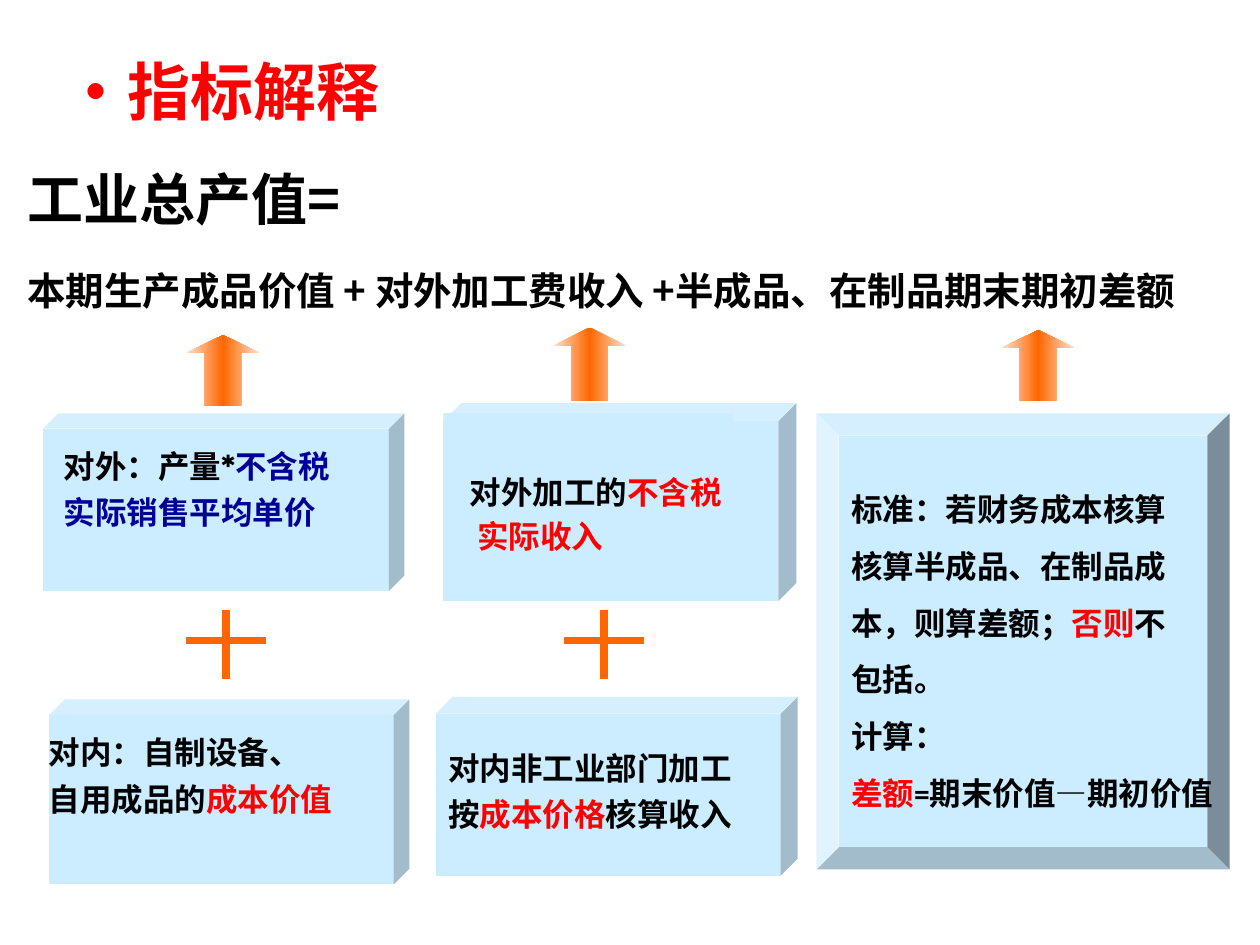
"""Build the slide that explains gross industrial output value."""
import dataclasses

import pptx
import pptx.dml.color
import pptx.enum.shapes
import pptx.enum.text
import pptx.oxml
import pptx.oxml.ns
import pptx.util

SHAPE = pptx.enum.shapes.MSO_SHAPE
ANCHOR = pptx.enum.text.MSO_ANCHOR
COLS, ROWS = 100, 75
CELL = pptx.util.Inches(0.1)


@dataclasses.dataclass(frozen=True)
class Theme:
    """Colours, fonts and type sizes of the slide."""
    ink: str = "000000"
    red: str = "FF0000"
    navy: str = "000099"
    panel: str = "CCECFF"
    orange: str = "FF6600"
    peach: str = "FFE1CD"
    heading: str = "Noto Sans CJK SC"
    label: str = "Montserrat"
    note: str = "Calibri"
    title_size: int = 36
    term_size: int = 32
    formula_size: int = 22
    body_size: int = 18
    plus_width: float = 4.25


T = Theme()


def rgb(value):
    """Turn a hex string into a colour."""
    return pptx.dml.color.RGBColor.from_string(value)


def grid(*cells):
    """Turn columns and rows of the grid into lengths."""
    return [round(c * CELL) for c in cells]


def assign(obj, values):
    """Set each attribute named in a dict."""
    for name, value in values.items():
        setattr(obj, name, value)


def write(sp, paras, size=T.body_size, font=T.label, wrap=False,
          anchor=ANCHOR.TOP, para=None, before=0.0, indents=()):
    """Write paragraphs, each a list of (text, colour[, font]) runs."""
    tf = sp.text_frame
    assign(tf, {"word_wrap": wrap, "vertical_anchor": anchor})
    for i, runs in enumerate(paras):
        p = tf.paragraphs[0] if i == 0 else tf.add_paragraph()
        assign(p, {"alignment": pptx.enum.text.PP_ALIGN.LEFT, **(para or {})})
        if i:
            p.space_before = pptx.util.Pt(size * before)
        if indents:
            p._p.get_or_add_pPr().set("marL", str(round(indents[i] * CELL)))
        for text, colour, *face in runs:
            r = p.add_run()
            r.text = text
            assign(r.font, {"size": pptx.util.Pt(size), "bold": True,
                            "name": face[0] if face else font})
            r.font.color.rgb = rgb(colour)


def panel(s, box, kind, adj=None):
    """Add a plain pale blue shape in the box."""
    sp = s.shapes.add_shape(kind, *grid(*box))
    sp.shadow.inherit = False
    sp.fill.solid()
    sp.fill.fore_color.rgb = rgb(T.panel)
    sp.line.fill.background()
    if adj is not None:
        sp.adjustments[0] = adj
    return sp


def labelled_cube(s, box, adj, inset, paras):
    """Add a cube with a text box placed inside the box by an inset."""
    x, y, w, h = box
    dx, dy = inset
    panel(s, box, SHAPE.CUBE, adj)
    sp = s.shapes.add_textbox(*grid(x + dx, y + dy, w - dx, h - dy))
    write(sp, paras, para={"line_spacing": 0.8}, before=0.5)


def fee_cube(s, box, paras):
    """Add a cube whose face carries a flat captioned panel."""
    x, y, w, h = box
    panel(s, box, SHAPE.CUBE, 0.09)
    face = panel(s, (x, y + h * 0.05, w * 0.82, h * 0.75), SHAPE.RECTANGLE)
    write(face, paras, anchor=ANCHOR.BOTTOM, before=0.2, indents=(1.1, 1.7))


def up_arrow(s, box):
    """Add an arrow shaded from peach through orange to peach."""
    sp = panel(s, box, SHAPE.UP_ARROW, 0.5)
    sp.adjustments[1] = 0.25
    sp.fill.gradient()
    sp.fill.gradient_angle = 0
    stops = sp._element.spPr.find(".//" + pptx.oxml.ns.qn("a:gsLst"))
    for gs in list(stops):
        stops.remove(gs)
    for pos, colour in ((0, T.peach), (50000, T.orange), (100000, T.peach)):
        stops.append(pptx.oxml.parse_xml(
            f'<a:gs {pptx.oxml.ns.nsdecls("a")} pos="{pos}">'
            f'<a:srgbClr val="{colour}"/></a:gs>'))


def plus_sign(s, box):
    """Add a plus of two lines that fills the box."""
    x, y, w, h = box
    bar, mid = y + h * 0.44, x + w / 2
    for ends in ((x, bar, x + w, bar), (mid, y, mid, y + h)):
        c = s.shapes.add_connector(
            pptx.enum.shapes.MSO_CONNECTOR.STRAIGHT, *grid(*ends))
        c.line.color.rgb = rgb(T.orange)
        c.line.width = pptx.util.Pt(T.plus_width)
        c._element.spPr.append(pptx.oxml.parse_xml(
            f'<a:effectLst {pptx.oxml.ns.nsdecls("a")}/>'))


def title(s, box):
    """Place and format the slide title."""
    sp = s.shapes.title
    assign(sp, dict(zip(("left", "top", "width", "height"), grid(*box))))
    write(sp, [[("·指标解释", T.red)]], T.title_size, T.heading, True,
          ANCHOR.MIDDLE)


def formula(s, box):
    """Write the term and, below it, the formula that defines it."""
    x, y, w, h = box
    lines = (("工业总产值=", T.term_size, 0),
             ("本期生产成品价值 + 对外加工费收入 +半成品、在制品期末期初差额",
              T.formula_size, 0.56))
    for text, size, share in lines:
        sp = s.shapes.add_textbox(*grid(x, y + h * share, w, h * (1 - share)))
        write(sp, [[(text, T.ink)]], size, T.heading, True,
              para={"line_spacing": 1.5})


def standard_panel(s, box):
    """Add the bevelled panel with the rule for the balance."""
    sp = panel(s, box, SHAPE.BEVEL, 0.054)
    write(sp, [
        [("标准：若财务成本核算", T.ink)],
        [("核算半成品、在制品成", T.ink)],
        [("本，则算差额；", T.ink), ("否则", T.red), ("不", T.ink)],
        [("包括。", T.ink)],
        [("计算：", T.ink)],
        [("差额", T.red), ("=期末价值—期初价值", T.ink)],
    ], font=T.note, anchor=ANCHOR.MIDDLE, para={"line_spacing": 1.5})


def main():
    """Build and save the slide."""
    prs = pptx.Presentation()
    prs.slide_width, prs.slide_height = grid(COLS, ROWS)
    s = prs.slides.add_slide(prs.slide_layouts[5])
    title(s, (4.1, 3.6, 92, 7.1))
    formula(s, (1.2, 9.9, 98.3, 16))
    labelled_cube(s, (3.4, 32.8, 28.7, 14.1), 0.087, (0.7, 2.8), [
        [("对外：产量*", T.ink), ("不含税", T.navy)],
        [("实际销售平均单价", T.navy)]])
    labelled_cube(s, (3.9, 55.5, 28.6, 14.7), 0.085, (-1, 2.8), [
        [("对内：自制设备、", T.ink)],
        [("自用成品的", T.ink), ("成本价值", T.red)]])
    fee_cube(s, (35.2, 32, 28, 15.7), [
        [("对外加工", T.ink), ("的", T.ink, T.note), ("不", T.red, T.note),
         ("含税", T.red)],
        [("实际收入", T.red, T.note)]])
    inner = panel(s, (34.6, 55.3, 28.7, 14.2), SHAPE.CUBE, 0.094)
    write(inner, [
        [("对内非工业部门加工", T.ink)],
        [("按", T.ink), ("成本价格", T.red), ("核算收入", T.ink)],
    ], anchor=ANCHOR.MIDDLE, para={"line_spacing": 0.8}, before=0.5)
    standard_panel(s, (64.8, 32.8, 32.8, 36.2))
    for x, y, h in ((14.8, 26.6, 5.6), (43.9, 26, 5.8), (79.5, 26.2, 5.6)):
        up_arrow(s, (x, y, 5.8, h))
    for x in (14.8, 44.8):
        plus_sign(s, (x, 48.4, 6.3, 5.5))
    prs.save("out.pptx")


if __name__ == "__main__":
    main()
